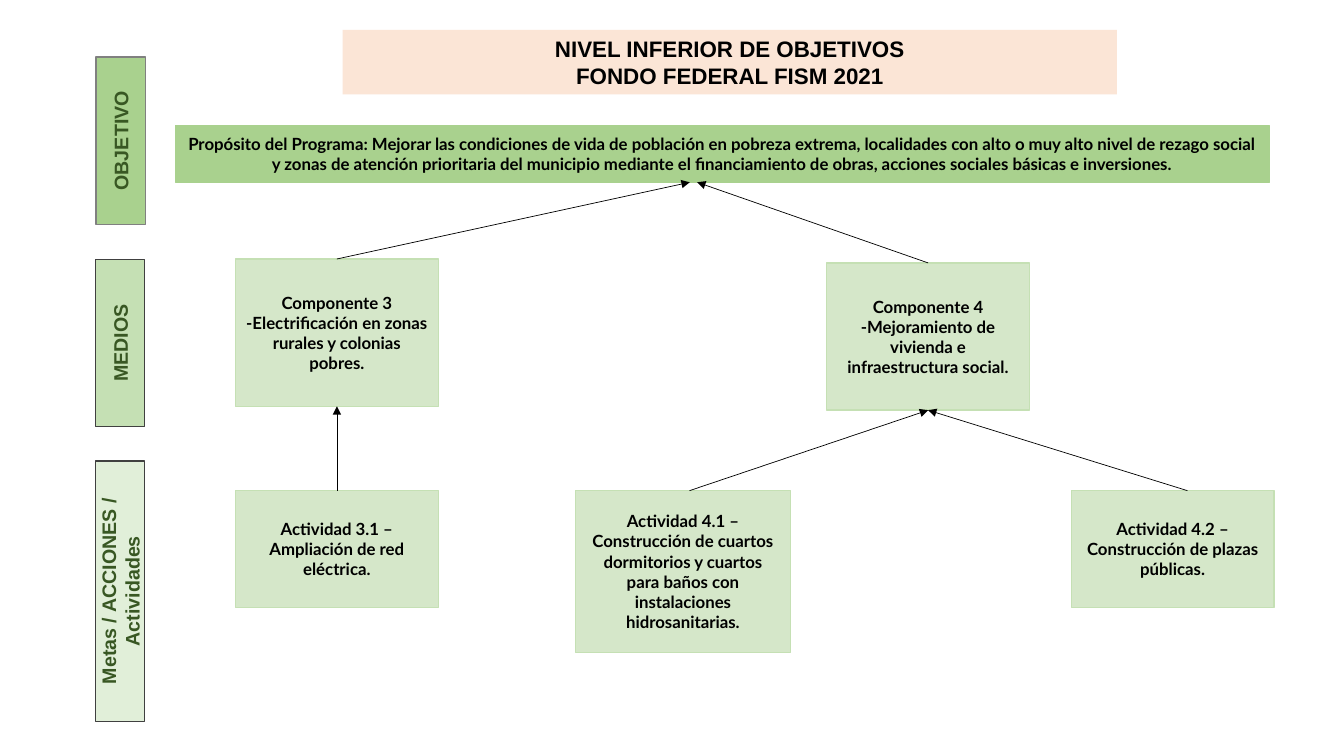
"""Build a one-slide tree of objectives, components and activities."""
from lxml import etree
from pptx import Presentation
from pptx.dml.color import RGBColor
from pptx.enum.shapes import MSO_CONNECTOR, MSO_SHAPE
from pptx.enum.text import MSO_ANCHOR, PP_ALIGN
from pptx.oxml.ns import qn
from pptx.util import Pt

RECT, PROCESS = MSO_SHAPE.RECTANGLE, MSO_SHAPE.FLOWCHART_PROCESS
STRAIGHT = MSO_CONNECTOR.STRAIGHT
TOP, MIDDLE = MSO_ANCHOR.TOP, MSO_ANCHOR.MIDDLE
CENTER = PP_ALIGN.CENTER
TOP_SITE, BOTTOM_SITE = 0, 2

COLORS = {
    "peach": "FBE5D6", "green": "A9D18E", "light": "C5E0B4", "card": "70AD47",
    "label": "385723", "gray": "808080", "dark": "404040", "black": "000000",
}


def write(tf, text, font="Lato", size=12, color="black", anchor=MIDDLE):
    tf.word_wrap = True
    tf.vertical_anchor = anchor
    tf.text = text
    for p in tf.paragraphs:
        p.alignment = CENTER
        for r in p.runs:
            r.font.name = font
            r.font.size = Pt(size)
            r.font.bold = True
            r.font.color.rgb = RGBColor.from_string(COLORS[color])


class Tree:
    def __init__(self, slide):
        self.shapes = slide.shapes

    def box(self, x, y, w, h, fill, line=None, alpha=None, kind=PROCESS):
        s = self.shapes.add_shape(kind, Pt(x), Pt(y), Pt(w), Pt(h))
        s.shadow.inherit = False
        s.fill.solid()
        s.fill.fore_color.rgb = RGBColor.from_string(COLORS[fill])
        if alpha:
            color = s.fill._xPr.find(qn("a:solidFill"))[0]
            etree.SubElement(color, qn("a:alpha"), val=str(alpha * 1000))
        if line:
            s.line.color.rgb = RGBColor.from_string(COLORS[line])
            s.line.width = Pt(1)
        else:
            s.line.fill.background()
        return s

    def title(self, text, x, y, w, h):
        s = self.box(x, y, w, h, "peach", kind=RECT)
        write(s.text_frame, text, font="Arial", size=16, anchor=TOP)

    def level(self, text, y, length, fill, line, alpha=None, x=85.7, thick=35.3):
        s = self.box(x - length / 2, y + (length - thick) / 2, length, thick,
                     fill, line, alpha)
        s.rotation = 270
        write(s.text_frame, text, font="Arial", size=14, color="label")

    def purpose(self, text, x, y, w, h):
        s = self.box(x, y, w, h, "green", "green")
        write(s.text_frame, text)
        return s

    def card(self, text, x, y, h, w=144.9):
        s = self.box(x, y, w, h, "card", "light", alpha=29)
        write(s.text_frame, text)
        return s

    def arrow(self, child, parent, start_x=None, end_x=None):
        c = self.shapes.add_connector(STRAIGHT, 0, 0, 0, 0)
        c.begin_connect(child, TOP_SITE)
        c.end_connect(parent, BOTTOM_SITE)
        if start_x:
            c.begin_x = Pt(start_x)
        if end_x:
            c.end_x = Pt(end_x)
        c.line.color.rgb = RGBColor.from_string(COLORS["black"])
        c.line.width = Pt(0.5)
        etree.SubElement(c.line._get_or_add_ln(), qn("a:tailEnd"), type="triangle")
        etree.SubElement(c._element.spPr, qn("a:effectLst"))


def main():
    prs = Presentation()
    prs.slide_width, prs.slide_height = Pt(960), Pt(540)
    tree = Tree(prs.slides.add_slide(prs.slide_layouts[6]))

    tree.title("NIVEL INFERIOR DE OBJETIVOS\nFONDO FEDERAL FISM 2021",
               244.8, 21.4, 553, 46)
    tree.level("OBJETIVO", 40.8, 119.5, "green", "gray", x=86.2)
    tree.level("MEDIOS", 185.2, 119.5, "light", "dark")
    tree.level("Metas / ACCIONES / Actividades", 329.4, 185.8, "light", "dark", alpha=50)

    purpose = tree.purpose(
        "Propósito del Programa: Mejorar las condiciones de vida de población en "
        "pobreza extrema, localidades con alto o muy alto nivel de rezago social y "
        "zonas de atención prioritaria del municipio mediante el financiamiento de "
        "obras, acciones sociales básicas e inversiones.",
        125.3, 89.6, 781.4, 40.6)

    power = tree.card("Componente 3\v-Electrificación en zonas rurales y colonias pobres.",
                      168.2, 185, 105.2)
    housing = tree.card("Componente 4\v-Mejoramiento de vivienda e infraestructura social.",
                        590.5, 187.8, 105.2)
    grid = tree.card("Actividad 3.1 – Ampliación de red eléctrica.", 168.2, 350.5, 83.4)
    rooms = tree.card("Actividad 4.1 – Construcción de cuartos dormitorios y cuartos "
                      "para baños con instalaciones hidrosanitarias.",
                      411, 350.5, 115.4, w=153.8)
    squares = tree.card("Actividad 4.2 – Construcción de plazas públicas.",
                        765.2, 350.5, 83.4)

    tree.arrow(power, purpose, end_x=492.7)
    tree.arrow(housing, purpose, end_x=498)
    tree.arrow(grid, power)
    tree.arrow(rooms, housing, start_x=492.5)
    tree.arrow(squares, housing, start_x=848.2)

    prs.save("out.pptx")


if __name__ == "__main__":
    main()
